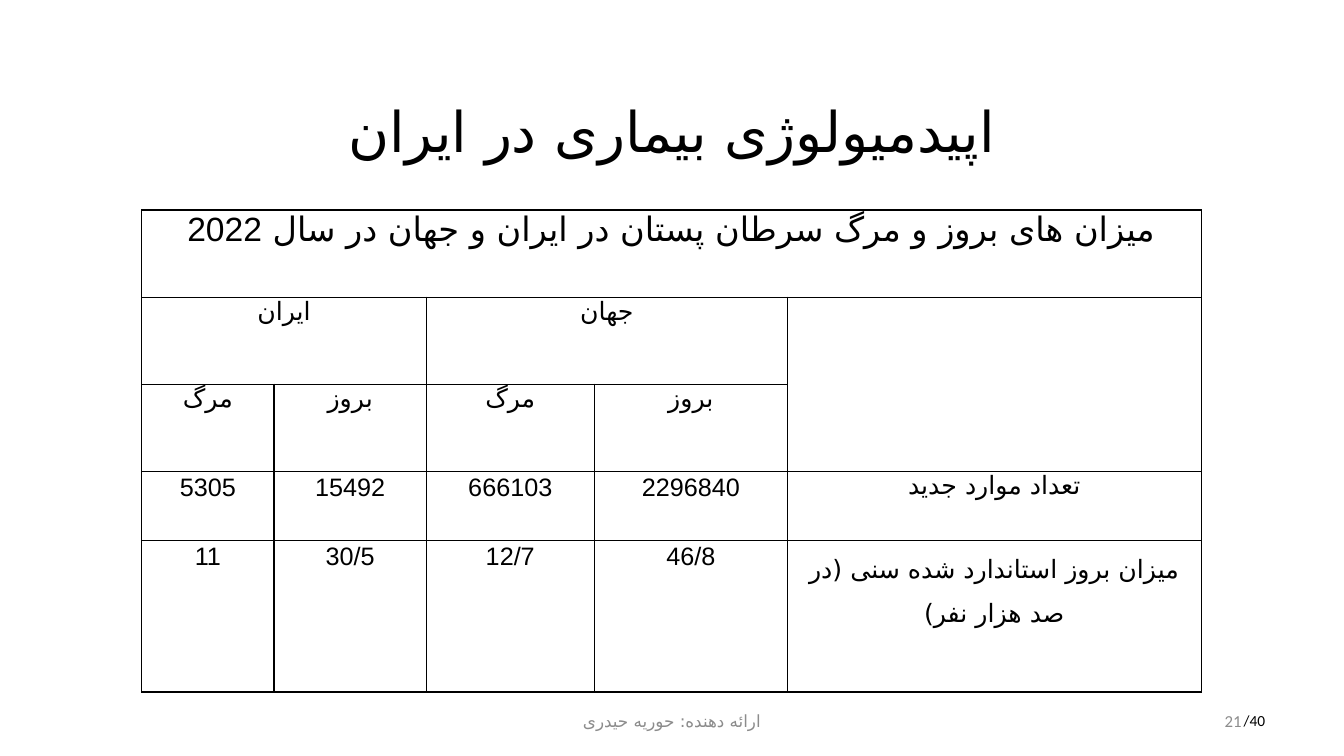
from lxml import etree
from pptx import Presentation
from pptx.dml.color import RGBColor
from pptx.enum.text import MSO_ANCHOR as Anchor, PP_ALIGN as Align
from pptx.oxml import parse_xml
from pptx.oxml.ns import nsdecls, qn
from pptx.util import Pt

PX = 9525
BLACK = RGBColor(0, 0, 0)
GREY = RGBColor(0x8C, 0x8C, 0x8C)
FONT = "Calibri"
PERSIAN_FONT = "DejaVu Sans"
DIGIT_FONT = "Arial"

COLUMNS = [126, 145, 160, 184, 394]
ROWS = [83, 83, 83, 66, 144]
CAPTION = "میزان های بروز و مرگ سرطان پستان در ایران و جهان در سال "
YEAR = "2022"
RATES = [
    ["ایران", "", "جهان"],
    ["مرگ", "بروز", "مرگ", "بروز"],
    ["5305", "15492", "666103", "2296840", "تعداد موارد جدید"],
    ["11", "30/5", "12/7", "46/8",
     "میزان بروز استاندارد شده سنی (در صد هزار نفر)"],
]
# first row, first column, last row, last column
MERGES = [(0, 0, 0, 4), (1, 0, 1, 1), (1, 2, 1, 3), (1, 4, 2, 4)]


def emu(*lengths):
    return [length * PX for length in lengths]


def write(frame, text, size=18, color=BLACK, align=Align.CENTER,
          spacing=None, rtl=False):
    """Append a run to the first paragraph, with a script font that suits it."""
    paragraph = frame.paragraphs[0]
    paragraph.alignment = align
    if spacing:
        paragraph.line_spacing = spacing
    if rtl:
        paragraph._p.get_or_add_pPr().set("rtl", "1")
    run = paragraph.add_run()
    run.text = text
    run.font.size = Pt(size)
    run.font.name = FONT
    run.font.color.rgb = color
    complex_script = etree.SubElement(run._r.get_or_add_rPr(), qn("a:cs"))
    complex_script.set("typeface", DIGIT_FONT if text.isascii() else PERSIAN_FONT)


def add_label(slide, box, text, anchor=Anchor.MIDDLE, **text_format):
    frame = slide.shapes.add_textbox(*emu(*box)).text_frame
    frame.word_wrap = True
    frame.vertical_anchor = anchor
    write(frame, text, **text_format)


def draw_borders(cell):
    properties = cell._tc.get_or_add_tcPr()
    for index, side in enumerate("LRTB"):
        properties.insert(index, parse_xml(
            f'<a:ln{side} {nsdecls("a")} w="{Pt(1)}"><a:solidFill>'
            f'<a:srgbClr val="{BLACK}"/></a:solidFill></a:ln{side}>'))


def add_rates_table(slide, box):
    table = slide.shapes.add_table(len(ROWS), len(COLUMNS), *emu(*box)).table
    table.first_row = table.horz_banding = False
    for column, width in zip(table.columns, emu(*COLUMNS)):
        column.width = width
    for row, height in zip(table.rows, emu(*ROWS)):
        row.height = height
    for cell in table.iter_cells():
        cell.fill.background()
        cell.margin_top = cell.margin_bottom = 0
        cell.margin_left = cell.margin_right = 7 * PX
        draw_borders(cell)
    for top, left, bottom, right in MERGES:
        table.cell(top, left).merge(table.cell(bottom, right))
    for part in (CAPTION, YEAR):
        write(table.cell(0, 0).text_frame, part, size=24, rtl=True)
    for r, texts in enumerate(RATES, start=1):
        for c, text in enumerate(texts):
            if not text:
                continue
            cell = table.cell(r, c)
            if text.isascii():
                cell.margin_top = 2 * PX
            write(cell.text_frame, text, rtl=True,
                  spacing=1.5 if (r, c) == (4, 4) else None)


def add_footer(slide, box):
    left, top, width, height = box
    add_label(slide, (left, top, 432, height), "ارائه دهنده: حوریه حیدری",
              size=12, color=GREY)
    add_label(slide, (left + 480, top, 288, height), "21",
              size=12, color=GREY, align=Align.RIGHT)
    add_label(slide, (left + width - 78, top + 6, 78, 28), "/40",
              anchor=Anchor.TOP, size=11, align=Align.LEFT)


def main():
    deck = Presentation()
    deck.slide_width, deck.slide_height = emu(1280, 720)
    slide = deck.slides.add_slide(deck.slide_layouts[6])
    add_label(slide, (88, 38, 1104, 139), "اپیدمیولوژی بیماری در ایران",
              size=40, spacing=1.5)
    add_rates_table(slide, (135, 200, sum(COLUMNS), sum(ROWS)))
    add_footer(slide, (424, 667, 829, 38))
    deck.save("out.pptx")


if __name__ == "__main__":
    main()
